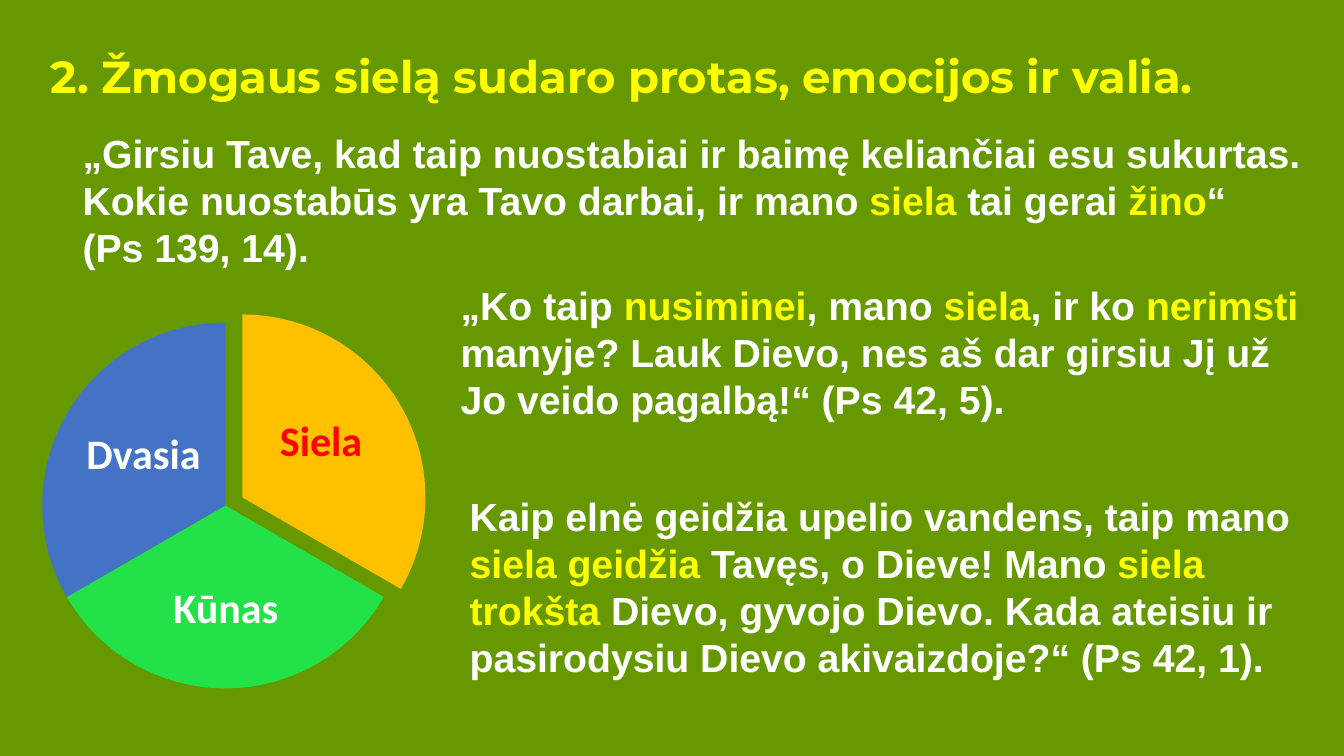
import dataclasses

import pptx
import pptx.dml.color
import pptx.enum.shapes
import pptx.enum.text
import pptx.util

Inches = pptx.util.Inches
Align = pptx.enum.text.PP_ALIGN
Anchor = pptx.enum.text.MSO_ANCHOR


@dataclasses.dataclass(frozen=True)
class Theme:
    background: str = "669900"
    white: str = "FFFFFF"
    highlight: str = "FFFF00"
    alert: str = "FF0000"
    soul: str = "FFC000"
    body: str = "23E148"
    spirit: str = "4472C4"
    title_font: str = "Montserrat"
    verse_font: str = "Arial"
    label_font: str = "Calibri"
    title_size: int = 32
    verse_size: int = 28
    label_size: int = 30


def rgb(code):
    return pptx.dml.color.RGBColor.from_string(code)


class SlideBuilder:
    def __init__(self, slide, theme):
        self.slide = slide
        self.theme = theme
        fill = slide.background.fill
        fill.solid()
        fill.fore_color.rgb = rgb(theme.background)

    def add_run(self, para, text, font, size, color):
        span = para.add_run()
        span.text = text
        span.font.name = font
        span.font.size = pptx.util.Pt(size)
        span.font.bold = True
        span.font.color.rgb = rgb(color)

    def text_frame(self, shapes, area, anchor):
        box = shapes.add_textbox(*map(Inches, area))
        frame = box.text_frame
        frame.word_wrap = True
        frame.vertical_anchor = anchor
        return frame

    def title(self, text, area):
        para = self.text_frame(self.slide.shapes, area, Anchor.BOTTOM).paragraphs[0]
        para.line_spacing = 0.9
        theme = self.theme
        self.add_run(para, text, theme.title_font, theme.title_size, theme.highlight)

    def verse(self, lines, area):
        """Write one paragraph per line; text between asterisks is highlighted."""
        theme = self.theme
        frame = self.text_frame(self.slide.shapes, area, Anchor.TOP)
        frame.auto_size = pptx.enum.text.MSO_AUTO_SIZE.SHAPE_TO_FIT_TEXT
        for index, line in enumerate(lines):
            para = frame.add_paragraph() if index else frame.paragraphs[0]
            for position, part in enumerate(line.split("*")):
                color = theme.highlight if position % 2 else theme.white
                self.add_run(para, part, theme.verse_font, theme.verse_size, color)

    def pie(self, slices, diameter):
        """Draw equal slices clockwise from twelve o'clock, each with a label."""
        shapes = self.slide.shapes.add_group_shape().shapes
        sweep = 360 / len(slices)
        for index, (text, fill, color, corner, label_area) in enumerate(slices):
            start = (270 + index * sweep) % 360
            wedge = shapes.add_shape(
                pptx.enum.shapes.MSO_SHAPE.PIE,
                *map(Inches, (*corner, diameter, diameter)))
            # Pie angles are stored in 60000ths of a degree, scaled by 100000.
            wedge.adjustments[0] = start * 0.6
            wedge.adjustments[1] = (start + sweep) % 360 * 0.6
            wedge.fill.solid()
            wedge.fill.fore_color.rgb = rgb(fill)
            wedge.line.fill.background()
            wedge.shadow.inherit = False
            self.slice_label(shapes, text, color, label_area)

    def slice_label(self, shapes, text, color, area):
        frame = self.text_frame(shapes, area, Anchor.MIDDLE)
        frame.margin_left = frame.margin_right = Inches(0.04)
        frame.margin_top = frame.margin_bottom = Inches(0.04)
        para = frame.paragraphs[0]
        para.alignment = Align.CENTER
        para.line_spacing = 0.9
        self.add_run(para, text, self.theme.label_font, self.theme.label_size, color)


def main():
    deck = pptx.Presentation()
    deck.slide_width = Inches(13.33)
    deck.slide_height = Inches(7.5)
    theme = Theme()
    page = SlideBuilder(deck.slides.add_slide(deck.slide_layouts[6]), theme)

    page.title("2. Žmogaus sielą sudaro protas, emocijos ir valia.",
               (0.4, 0.34, 12.51, 0.73))

    center_corner = (0.42, 3.2)
    soul_corner = (0.59, 3.12)
    page.pie([
        ("Siela", theme.soul, theme.alert, soul_corner, (2.57, 3.79, 1.23, 1.21)),
        ("Kūnas", theme.body, theme.white, center_corner, (1.42, 5.49, 1.64, 1.12)),
        ("Dvasia", theme.spirit, theme.white, center_corner, (0.81, 3.92, 1.23, 1.21)),
    ], diameter=3.63)

    page.verse([
        "„Girsiu Tave, kad taip nuostabiai ir baimę keliančiai esu sukurtas. "
        "Kokie nuostabūs yra Tavo darbai, ir mano *siela* tai gerai *žino*“",
        "(Ps 139, 14).",
    ], (0.72, 1.23, 12.31, 1.51))
    page.verse([
        "„Ko taip *nusiminei*, mano *siela*, ir ko *nerimsti* manyje? "
        "Lauk Dievo, nes aš dar girsiu Jį už Jo veido pagalbą!“ (Ps 42, 5).",
    ], (4.47, 2.74, 8.61, 1.51))
    page.verse([
        "Kaip elnė geidžia upelio vandens, taip mano *siela geidžia *"
        "Tavęs, o Dieve! Mano *siela trokšta* Dievo, gyvojo Dievo. "
        "Kada ateisiu ir pasirodysiu Dievo akivaizdoje?“ (Ps 42, 1).",
    ], (4.56, 4.83, 8.47, 1.99))

    deck.save("out.pptx")


if __name__ == "__main__":
    main()
